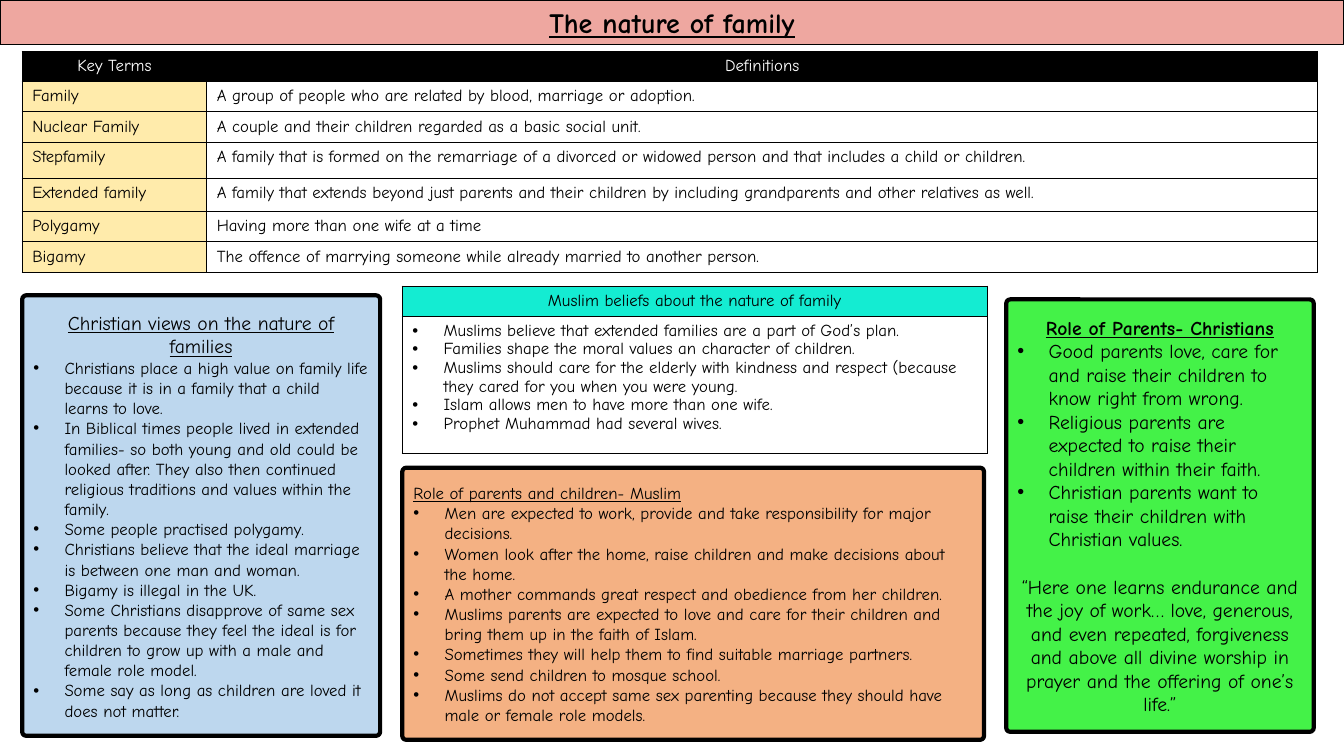
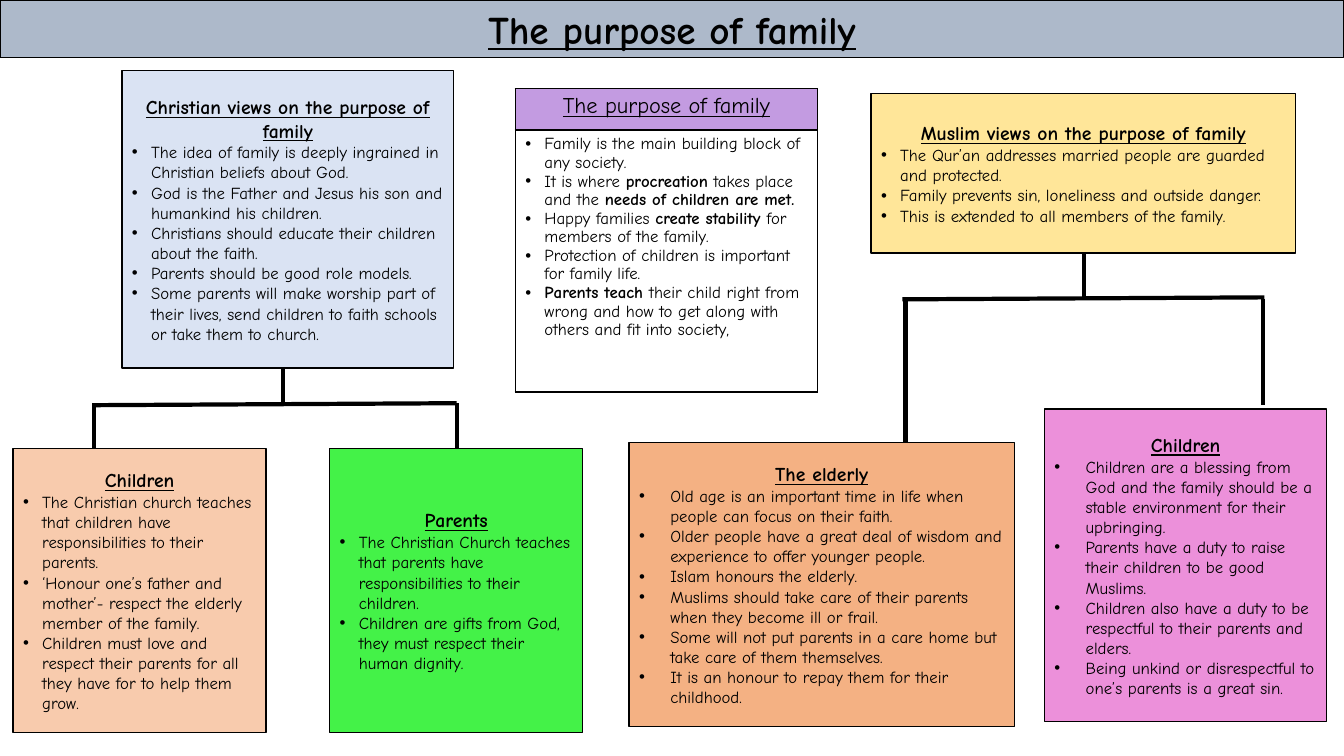
import pptx
import pptx.util
import pptx.dml.color
import pptx.enum.dml
import pptx.enum.shapes
import pptx.enum.text
import pptx.oxml
import pptx.oxml.ns
import lxml.etree

PX = 9144
RGB = pptx.dml.color.RGBColor.from_string
Pt = pptx.util.Pt
MID = pptx.enum.text.MSO_ANCHOR.MIDDLE
LEFT = pptx.enum.text.PP_ALIGN.LEFT
MIDST = pptx.enum.text.PP_ALIGN.CENTER
KIND = pptx.enum.shapes.MSO_SHAPE
qn = pptx.oxml.ns.qn


class Theme:
    font = "Comic Neue"
    ink, white = "000000", "FFFFFF"
    rose, slate = "EEA7A0", "ADB9CA"
    sky, ice = "BDD7EE", "DAE3F3"
    cream, gold = "FFEBAB", "FFE699"
    green, teal = "44F248", "14ECD2"
    peach, tan = "F8CBAD", "F4B183"
    pink, mauve = "EC90DA", "C39BE1"
    body, head, large = 12, 14, 16
    thin, fine, thick = 0.75, 1, 3
    wide, slim = 31, 19
    tight = 0.96


def write(frame, text, size, align=LEFT, look="", indent=0, tone=Theme.ink, pitch=1, gap=0):
    para = frame.add_paragraph() if frame.text else frame.paragraphs[0]
    para.alignment = align
    para.line_spacing = pitch
    para.space_before = Pt(gap)
    if indent:
        props = para._p.get_or_add_pPr()
        props.set("marL", str(indent * PX))
        props.set("indent", str(-indent * PX))
        lxml.etree.SubElement(props, qn("a:buFont")).set("typeface", "Arial")
        lxml.etree.SubElement(props, qn("a:buChar")).set("char", "•")
    for i, part in enumerate(text.split("*")):
        if part:
            run = para.add_run()
            run.text = part
            run.font.name = Theme.font
            run.font.size = Pt(size)
            run.font.bold = "b" in look or i % 2 == 1
            run.font.underline = "u" in look
            run.font.color.rgb = RGB(tone)


def grid(page, left, top, cols, rows, fills):
    frame = page.shapes.add_table(len(rows), len(cols), left * PX, top * PX,
                                  sum(cols) * PX, sum(rows) * PX)
    table = frame.table
    table.first_row = table.horz_banding = False
    for col, width in zip(table.columns, cols):
        col.width = width * PX
    for row, height, tones in zip(table.rows, rows, fills):
        row.height = height * PX
        for cell, tone in zip(row.cells, tones):
            cell.fill.solid()
            cell.fill.fore_color.rgb = RGB(tone)
            props = cell._tc.get_or_add_tcPr()
            for i, side in enumerate(("lnL", "lnR", "lnT", "lnB")):
                edge = lxml.etree.Element(qn("a:" + side), w=str(Pt(Theme.fine)))
                paint = lxml.etree.SubElement(edge, qn("a:solidFill"))
                lxml.etree.SubElement(paint, qn("a:srgbClr")).set("val", Theme.ink)
                props.insert(i, edge)
    return table


deck = pptx.Presentation()
deck.slide_width = 1333 * PX
deck.slide_height = 750 * PX

pages = []
for text, size, height, tone in (
    ("The nature of family", 20, 44, Theme.rose),
    ("The purpose of family", 28, 57, Theme.slate),
):
    page = deck.slides.add_slide(deck.slide_layouts[5])
    band = page.shapes.title
    band.left, band.top, band.width, band.height = 0, 0, 1333 * PX, height * PX
    band.fill.solid()
    band.fill.fore_color.rgb = RGB(tone)
    band.line.color.rgb = RGB(Theme.ink)
    band.line.width = Pt(Theme.thin)
    band.text_frame.auto_size = pptx.enum.text.MSO_AUTO_SIZE.NONE
    band.text_frame.vertical_anchor = MID
    write(band.text_frame, text, size, MIDST, "bu")
    pages.append(page)
nature, purpose = pages

terms = (
    ("Key Terms", "Definitions"),
    ("Family", "A group of people who are related by blood, marriage or adoption."),
    ("Nuclear Family", "A couple and their children regarded as a basic social unit."),
    ("Stepfamily", "A family that is formed on the remarriage of a divorced or widowed person "
                   "and that includes a child or children."),
    ("Extended family", "A family that extends beyond just parents and their children by "
                        "including grandparents and other relatives as well."),
    ("Polygamy", "Having more than one wife at a time"),
    ("Bigamy", "The offence of marrying someone while already married to another person."),
)
fills = [(Theme.ink, Theme.ink)] + [(Theme.cream, Theme.white)] * 6
table = grid(nature, 22, 51, (183, 1102), (30, 30, 30, 36, 33, 30, 30), fills)
for i, pair in enumerate(terms):
    for j, text in enumerate(pair):
        write(table.cell(i, j).text_frame, text, Theme.body,
              LEFT if i else MIDST, tone=Theme.ink if i else Theme.white)

lists = (
    (nature, 399, 284, 580, (30, 136), Theme.teal, Theme.body, "", Theme.wide,
     "Muslim beliefs about the nature of family", (
         "Muslims believe that extended families are a part of God’s plan.",
         "Families shape the moral values an character of children.",
         "Muslims should care for the elderly with kindness and respect (because they cared "
         "for you when you were young.",
         "Islam allows men to have more than one wife.",
         "Prophet Muhammad had several wives.")),
    (purpose, 511, 88, 300, (41, 260), Theme.mauve, Theme.large, "u", Theme.slim,
     "The purpose of family", (
         "Family is the main building block of any society.",
         "It is where *procreation* takes place and the *needs of children are met.*",
         "Happy families *create stability *for members of the family.",
         "Protection of children is important for family life.",
         "*Parents teach *their child right from wrong and how to get along with others and "
         "fit into society,")),
)
for page, left, top, width, rows, tone, size, look, indent, head, items in lists:
    table = grid(page, left, top, (width,), rows, ((tone,), (Theme.white,)))
    write(table.cell(0, 0).text_frame, head, size, MIDST, look)
    for item in items:
        write(table.cell(1, 0).text_frame, item, Theme.body, indent=indent, pitch=Theme.tight)

for x1, y1, x2, y2 in (
    (281, 365, 281, 400), (453, 400, 93, 402), (93, 400, 93, 445), (453, 400, 453, 445),
    (1075, 250, 1075, 295), (1254, 295, 895, 297), (1253, 297, 1253, 402), (898, 296, 898, 445),
):
    link = purpose.shapes.add_connector(pptx.enum.shapes.MSO_CONNECTOR.STRAIGHT,
                                        x1 * PX, y1 * PX, x2 * PX, y2 * PX)
    link.line.color.rgb = RGB(Theme.ink)
    link.line.width = Pt(Theme.thick)
    lxml.etree.SubElement(link._element.spPr, qn("a:effectLst"))

boxes = (
    (nature, (22, 293, 355, 437), Theme.sky, Theme.head, "u", MIDST, Theme.body, Theme.wide,
     "Christian views on the nature of families", (
         "Christians place a high value on family life because it is in a family that a child "
         "learns to love.",
         "In Biblical times people lived in extended families- so both young and old could be "
         "looked after. They also then continued religious traditions and values within the "
         "family.",
         "Some people practised polygamy.",
         "Christians believe that the ideal marriage is between one man and woman.",
         "Bigamy is illegal in the UK.",
         "Some Christians disapprove of same sex parents because they feel the ideal is for "
         "children to grow up with a male and female role model.",
         "Some say as long as children are loved it does not matter.")),
    (nature, (399, 464, 577, 270), Theme.tan, Theme.body, "u", LEFT, Theme.body, Theme.wide,
     "Role of parents and children- Muslim", (
         "Men are expected to work, provide and take responsibility for major decisions.",
         "Women look after the home, raise children and make decisions about the home.",
         "A mother commands great respect and obedience from her children.",
         "Muslims parents are expected to love and care for their children and bring them up "
         "in the faith of Islam.",
         "Sometimes they will help them to find suitable marriage partners.",
         "Some send children to mosque school.",
         "Muslims do not accept same sex parenting because they should have male or female "
         "role models.")),
    (nature, (998, 297, 305, 429), Theme.green, Theme.head, "bu", MIDST, Theme.head, Theme.wide,
     "Role of Parents- Christians", (
         "Good parents love, care for and raise their children to know right from wrong.",
         "Religious parents are expected to raise their children within their faith.",
         "Christian parents want to raise their children with Christian values.")),
    (purpose, (121, 70, 329, 295), Theme.ice, Theme.head, "bu", MIDST, Theme.body, Theme.slim,
     "Christian views on the purpose of family", (
         "The idea of family is deeply ingrained in Christian beliefs about God.",
         "God is the Father and Jesus his son and humankind his children.",
         "Christians should educate their children about the faith.",
         "Parents should be good role models.",
         "Some parents will make worship part of their lives, send children to faith schools "
         "or take them to church.")),
    (purpose, (864, 93, 421, 158), Theme.gold, Theme.head, "bu", MIDST, Theme.body, Theme.slim,
     "Muslim views on the purpose of family", (
         "The Qur’an addresses married people are guarded and protected.",
         "Family prevents sin, loneliness and outside danger.",
         "This is extended to all members of the family.")),
    (purpose, (13, 445, 251, 282), Theme.peach, Theme.head, "bu", MIDST, Theme.body, Theme.slim,
     "Children", (
         "The Christian church teaches that children have responsibilities to their parents.",
         "‘Honour one’s father and mother’- respect the elderly member of the family.",
         "Children must love and respect their parents for all they have for to help them "
         "grow.")),
    (purpose, (327, 445, 251, 282), Theme.green, Theme.head, "bu", MIDST, Theme.body, Theme.slim,
     "Parents", (
         "The Christian Church teaches that parents have responsibilities to their children.",
         "Children are gifts from God, they must respect their human dignity.")),
    (purpose, (624, 439, 382, 282), Theme.tan, Theme.head, "bu", MIDST, Theme.body, Theme.wide,
     "The elderly", (
         "Old age is an important time in life when people can focus on their faith.",
         "Older people have a great deal of wisdom and experience to offer younger people.",
         "Islam honours the elderly.",
         "Muslims should take care of their parents when they become ill or frail.",
         "Some will not put parents in a care home but take care of them themselves.",
         "It is an honour to repay them for their childhood.")),
    (purpose, (1036, 406, 280, 310), Theme.pink, Theme.head, "bu", MIDST, Theme.body, Theme.wide,
     "Children", (
         "Children are a blessing from God and the family should be a stable environment for "
         "their upbringing.",
         "Parents have a duty to raise their children to be good Muslims.",
         "Children also have a duty to be respectful to their parents and elders.",
         "Being unkind or disrespectful to one’s parents is a great sin.")),
)
frames = {}
for page, place, tone, size, look, align, body, indent, head, items in boxes:
    curved = page is nature
    kind = KIND.ROUNDED_RECTANGLE if curved else KIND.RECTANGLE
    box = page.shapes.add_shape(kind, *(n * PX for n in place))
    if curved:
        box.adjustments[0] = 4 / min(place[2:])
    box.shadow.inherit = False
    box.fill.solid()
    box.fill.fore_color.rgb = RGB(tone)
    box.line.color.rgb = RGB(Theme.ink)
    box.line.width = Pt(Theme.thick if curved else Theme.fine)
    frame = box.text_frame
    frame.word_wrap = True
    frame.vertical_anchor = MID
    write(frame, head, size, align, look)
    for item in items:
        write(frame, item, body, indent=indent)
    frames[head] = frame

write(frames["Role of Parents- Christians"],
      "“Here one learns endurance and the joy of work… love, generous, and even repeated, "
      "forgiveness and above all divine worship in prayer and the offering of one’s life.”",
      Theme.head, MIDST, gap=17)

deck.save("out.pptx")
